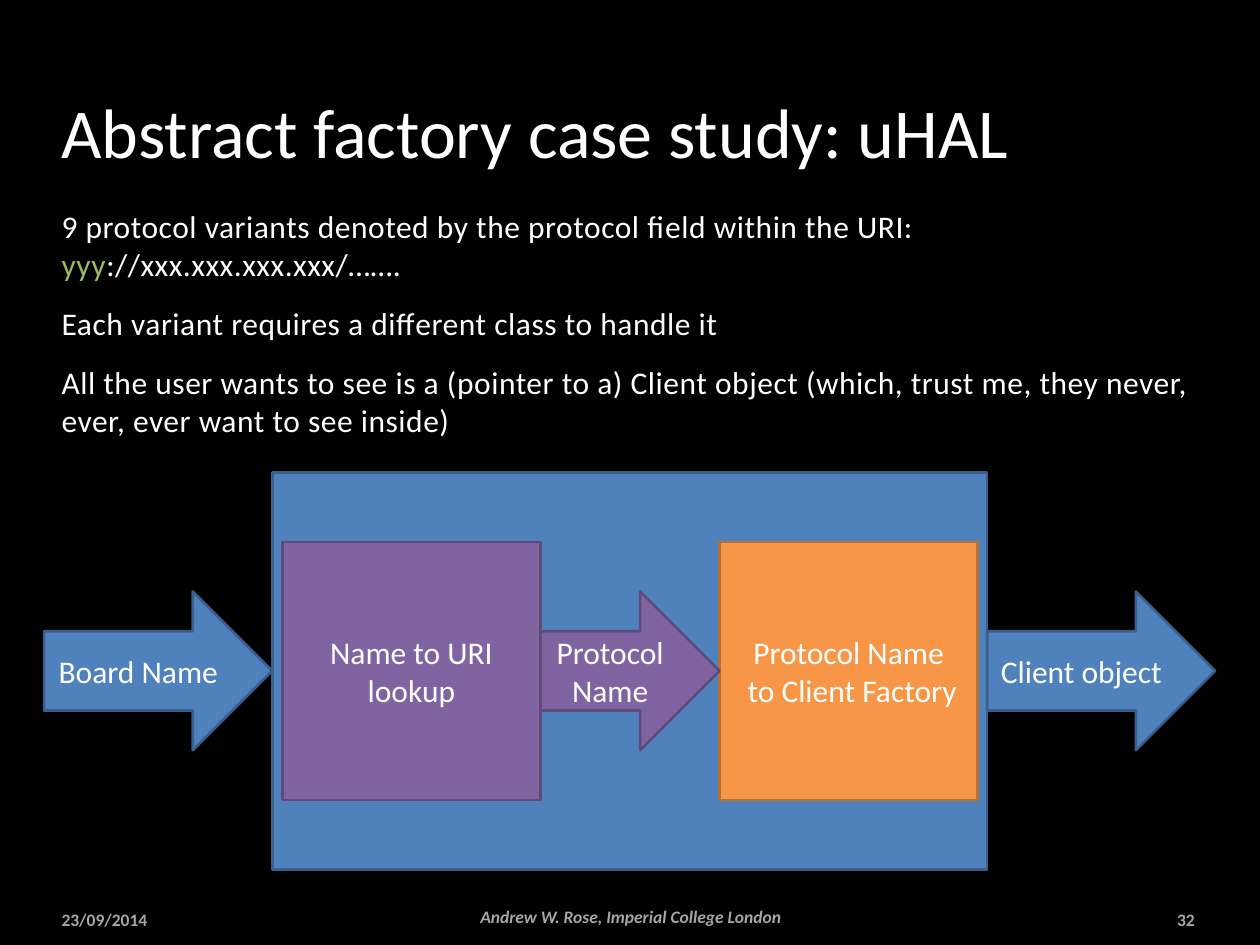
from pptx import Presentation
from pptx import util as u
from pptx.dml.color import RGBColor
from pptx.enum import shapes, text

# Theme: colours and type sizes
THEME = {
    "font": "Calibri",
    "back": "000000", "ink": "FFFFFF", "dim": "A6A6A6", "mark": "9BBB59",
    "blue": ("4F81BD", "3A5F8C"),
    "plum": ("8064A2", "5F4A78"),
    "gold": ("F79646", "B76F34"),
    "title": 40, "body": 18, "foot": 10,
}
WIDE, HIGH = 10, 7.5
MID = 0.71  # centre line of the flow, share of the height
LEFT, MIDDLE, RIGHT = text.PP_ALIGN.LEFT, text.PP_ALIGN.CENTER, text.PP_ALIGN.RIGHT

deck = Presentation()
deck.slide_width, deck.slide_height = u.Inches(WIDE), u.Inches(HIGH)
slide = deck.slides.add_slide(deck.slide_layouts[6])
slide.background.fill.solid()
slide.background.fill.fore_color.rgb = RGBColor.from_string(THEME["back"])


def place(x, y, w, h):
    """Turn shares of the slide's size into lengths."""
    return [u.Inches(v) for v in (x * WIDE, y * HIGH, w * WIDE, h * HIGH)]


def style(frame, size, ink, align, anchor):
    """Format all text in a frame."""
    frame.word_wrap = True
    frame.vertical_anchor = anchor
    for para in frame.paragraphs:
        para.alignment = align
        for run in para.runs:
            font = run.font
            font.name, font.size = THEME["font"], u.Pt(THEME[size])
            font.color.rgb = RGBColor.from_string(THEME[ink])


# Title
frame = slide.shapes.add_textbox(*place(0.039, 0.033, 0.84, 0.156)).text_frame
frame.text = "Abstract factory case study: uHAL"
style(frame, "title", "ink", LEFT, text.MSO_ANCHOR.BOTTOM)

# Body, with the protocol field marked
body = [
    ["9 protocol variants denoted by the protocol field within the URI: ",
     "yyy", "://xxx.xxx.xxx.xxx/……."],
    ["Each variant requires a different class to handle it"],
    ["All the user wants to see is a (pointer to a) Client object "
     "(which, trust me, they never, ever, ever want to see inside)"],
]
frame = slide.shapes.add_textbox(*place(0.039, 0.213, 0.918, 0.27)).text_frame
for i, parts in enumerate(body):
    para = frame.paragraphs[0] if i == 0 else frame.add_paragraph()
    para.space_before = u.Pt(12)
    for part in parts:
        para.add_run().text = part
style(frame, "body", "ink", LEFT, text.MSO_ANCHOR.TOP)
for para in frame.paragraphs:
    for run in para.runs:
        run.font._element.set("spc", "30")
mark = frame.paragraphs[0].runs[1]
mark.font.color.rgb = RGBColor.from_string(THEME["mark"])

# Flow: words, shape, left, width, height, colours; all on one centre line
BOX, ARROW = shapes.MSO_SHAPE.RECTANGLE, shapes.MSO_SHAPE.RIGHT_ARROW
flow = [
    ("Board Name", ARROW, 0.035, 0.181, 0.168, "blue"),
    ("", BOX, 0.2165, 0.567, 0.42, "blue"),
    ("Client object", ARROW, 0.7835, 0.181, 0.168, "blue"),
    ("Name to URI lookup", BOX, 0.224, 0.205, 0.273, "plum"),
    ("Protocol Name\n to Client Factory", BOX, 0.571, 0.205, 0.273, "gold"),
    ("Protocol Name", ARROW, 0.429, 0.142, 0.168, "plum"),
]
for words, kind, x, w, h, tone in flow:
    shape = slide.shapes.add_shape(kind, *place(x, MID - h / 2, w, h))
    shape.shadow.inherit = False
    fill, edge = THEME[tone]
    shape.fill.solid()
    shape.fill.fore_color.rgb = RGBColor.from_string(fill)
    shape.line.color.rgb = RGBColor.from_string(edge)
    shape.line.width = u.Pt(1.5)
    if words:
        shape.text_frame.text = words
        style(shape.text_frame, "body", "ink", MIDDLE, text.MSO_ANCHOR.MIDDLE)

# Footer: words, left, top, width, alignment, italic
foot = [
    ("23/09/2014", 0.039, 0.955, 0.16, LEFT, False),
    ("Andrew W. Rose, Imperial College London", 0.277, 0.952, 0.447, MIDDLE, True),
    ("32", 0.862, 0.955, 0.096, RIGHT, False),
]
for words, x, y, w, align, slant in foot:
    frame = slide.shapes.add_textbox(*place(x, y, w, 0.036)).text_frame
    frame.text = words
    style(frame, "foot", "dim", align, text.MSO_ANCHOR.MIDDLE)
    font = frame.paragraphs[0].runs[0].font
    font.bold, font.italic = True, slant

deck.save("out.pptx")
